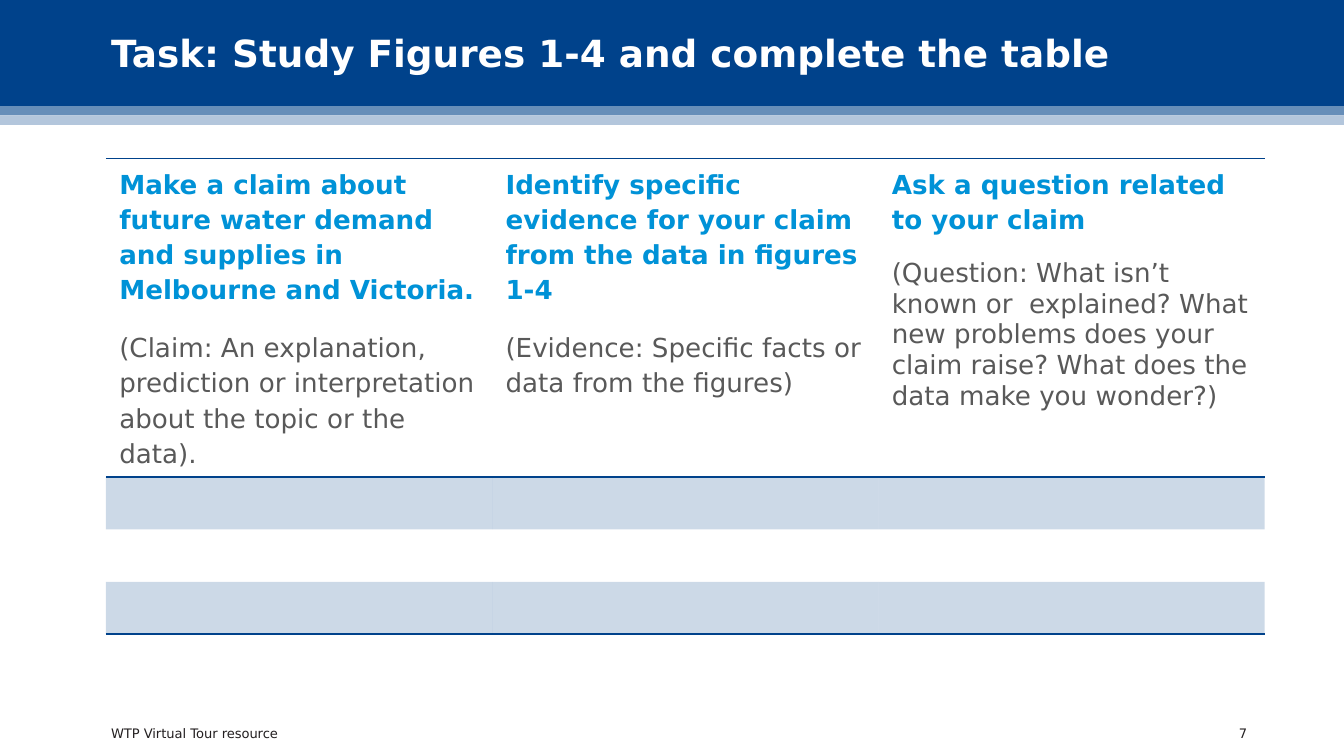
from dataclasses import dataclass

from lxml.etree import SubElement
from pptx import Presentation
from pptx.dml.color import RGBColor
from pptx.enum.shapes import MSO_SHAPE
from pptx.enum.text import MSO_ANCHOR, MSO_AUTO_SIZE, PP_ALIGN
from pptx.oxml.ns import qn
from pptx.util import Cm, Pt


@dataclass(frozen=True)
class Theme:
    font: str = "DejaVu Sans"
    navy: str = "00428B"
    middle_blue: str = "668EB9"
    pale_blue: str = "B3C6DC"
    heading_blue: str = "0092D7"
    grey: str = "595959"
    black: str = "231F20"
    white: str = "FFFFFF"
    title_size: int = 20
    table_size: int = 14
    footer_size: int = 7


theme = Theme()


def format_paragraph(paragraph, size, color, bold=False, spacing=1.0):
    paragraph.font.name = theme.font
    paragraph.font.size = Pt(size)
    paragraph.font.bold = bold
    paragraph.font.color.rgb = RGBColor.from_string(color)
    paragraph.line_spacing = spacing


def add_border(cell, side):
    line = SubElement(cell._tc.get_or_add_tcPr(), qn(f"a:{side}"), w=str(Pt(1)))
    fill = SubElement(line, qn("a:solidFill"))
    SubElement(fill, qn("a:srgbClr"), val=theme.navy)


presentation = Presentation()
presentation.slide_width = Cm(25.4)
presentation.slide_height = Cm(14.28)
slide = presentation.slides.add_slide(presentation.slide_layouts[5])

bands = [
    (2.0, 0.18, theme.middle_blue),
    (2.18, 0.18, theme.pale_blue),
    (0, 2.0, theme.navy),
]
for top, height, color in bands:
    band = slide.shapes.add_shape(MSO_SHAPE.RECTANGLE, 0, Cm(top), presentation.slide_width, Cm(height))
    band.shadow.inherit = False
    band.fill.solid()
    band.fill.fore_color.rgb = RGBColor.from_string(color)
    band.line.fill.background()

title = slide.shapes.title
slide.shapes.element.append(title.element)
title.left, title.top, title.width, title.height = Cm(2), Cm(0.15), Cm(21.41), Cm(1.8)
title.text = "Task: Study Figures 1-4 and complete the table"
title_paragraph = title.text_frame.paragraphs[0]
format_paragraph(title_paragraph, theme.title_size, theme.white, bold=True, spacing=0.9)
title_paragraph.alignment = PP_ALIGN.LEFT

columns = [
    (
        "Make a claim about future water demand and supplies in Melbourne and Victoria.",
        "(Claim: An explanation, prediction or interpretation about the topic or the data).",
        1.15,
        12,
    ),
    (
        "Identify specific evidence for your claim from the data in figures 1-4",
        "(Evidence: Specific facts or data from the figures)",
        1.15,
        12,
    ),
    (
        "Ask a question related to your claim",
        "(Question: What isn’t known or  explained? What new problems does your claim raise? "
        "What does the data make you wonder?)",
        1.0,
        0,
    ),
]
row_heights = [6.02, 0.99, 0.99, 0.99]
column_width = 7.3

table_frame = slide.shapes.add_table(
    len(row_heights), len(columns), Cm(2), Cm(2.99), Cm(column_width * len(columns)), Cm(sum(row_heights))
)
table = table_frame.table
table.first_row = False
table.horz_banding = False
table._tbl.tblPr.find(qn("a:tableStyleId")).text = "{2D5ABB26-0587-4C30-8999-92F81FD0307C}"
for column in table.columns:
    column.width = Cm(column_width)
for row, height in zip(table.rows, row_heights):
    row.height = Cm(height)

for column_index, (heading, hint, hint_spacing, space_after) in enumerate(columns):
    header = table.cell(0, column_index)
    header.text = heading
    format_paragraph(header.text_frame.paragraphs[0], theme.table_size, theme.heading_blue, bold=True, spacing=1.15)
    hint_paragraph = header.text_frame.add_paragraph()
    hint_paragraph.text = hint
    format_paragraph(hint_paragraph, theme.table_size, theme.grey, spacing=hint_spacing)
    hint_paragraph.space_before = Pt(12)
    hint_paragraph.space_after = Pt(space_after)

    add_border(header, "lnT")
    add_border(header, "lnB")
    add_border(table.cell(len(row_heights) - 1, column_index), "lnB")

    for row_index in range(len(row_heights)):
        cell = table.cell(row_index, column_index)
        if row_index % 2 == 0:
            cell.fill.background()
        else:
            cell.fill.solid()
            cell.fill.fore_color.rgb = RGBColor.from_string(theme.navy)
            fill_color = cell._tc.tcPr.find(f"{qn('a:solidFill')}/{qn('a:srgbClr')}")
            SubElement(fill_color, qn("a:alpha"), val="20000")
        if row_index > 0:
            format_paragraph(cell.text_frame.paragraphs[0], theme.table_size, theme.grey)

footers = [
    ("WTP Virtual Tour resource", 2.0, 8.6, PP_ALIGN.LEFT),
    ("7", 22.02, 1.65, PP_ALIGN.RIGHT),
]
footer_boxes = []
for text, left, width, alignment in footers:
    footer = slide.shapes.add_textbox(Cm(left), Cm(13.63), Cm(width), Cm(0.46))
    footer.text_frame.text = text
    paragraph = footer.text_frame.paragraphs[0]
    format_paragraph(paragraph, theme.footer_size, theme.black)
    paragraph.alignment = alignment
    footer_boxes.append(footer)

for shape in [title, *footer_boxes]:
    frame = shape.text_frame
    frame.auto_size = MSO_AUTO_SIZE.NONE
    frame.word_wrap = True
    frame.vertical_anchor = MSO_ANCHOR.MIDDLE
    frame.margin_left = frame.margin_right = frame.margin_top = frame.margin_bottom = Cm(0.1)

presentation.save("out.pptx")
